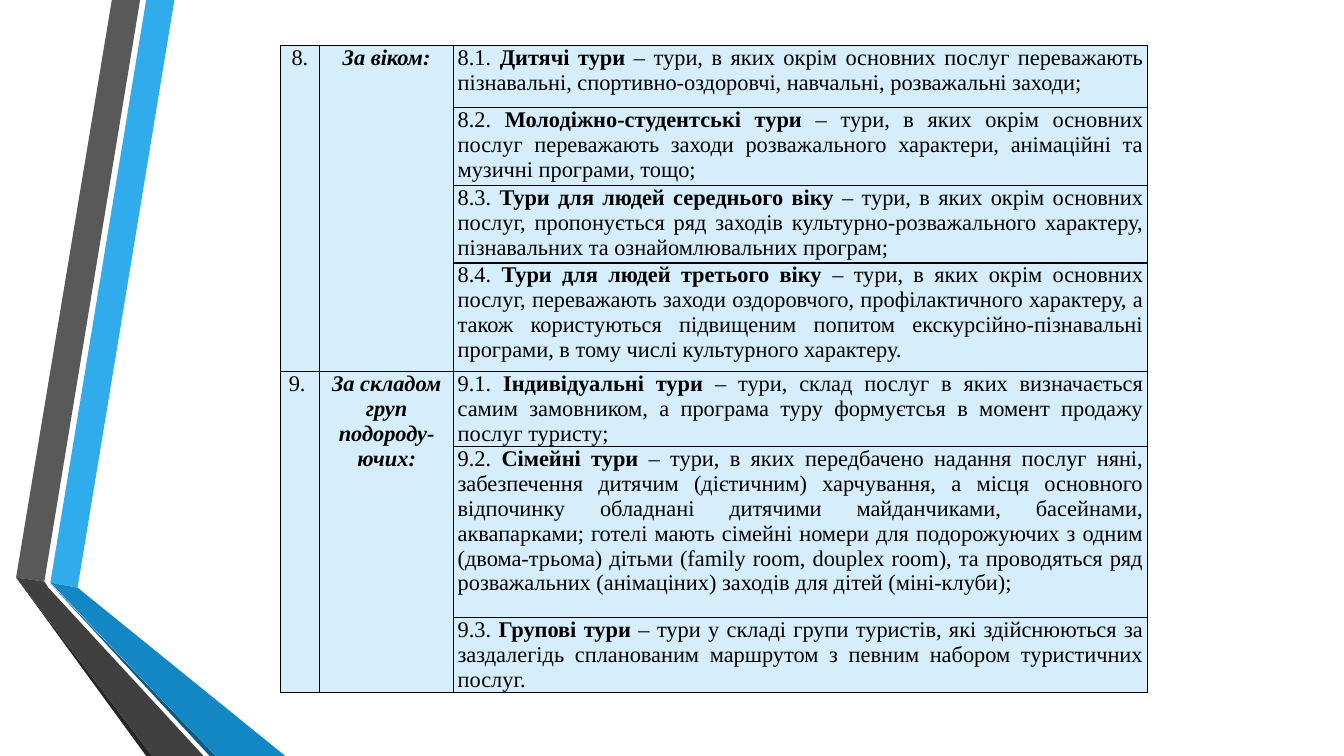
from dataclasses import dataclass
from lxml.etree import SubElement
from pptx import Presentation
from pptx.dml.color import RGBColor
from pptx.enum.text import PP_ALIGN
from pptx.oxml import parse_xml
from pptx.oxml.ns import nsdecls
from pptx.util import Inches, Pt


@dataclass(frozen=True)
class Theme:
    font: str = "Times New Roman"
    size: int = 16
    ink: str = "000000"
    cell: str = "D6EEFB"
    rule: float = 1
    sky: str = "30ACEC"
    blue: str = "1287C3"
    navy: str = "0C5A82"
    gray: str = "595959"
    dark: str = "404040"
    black: str = "262626"


THEME = Theme()

# Ribbon strips: colour and corner points, in inches from the box corner
STRIPS = [
    (THEME.sky, [(0.34, 5.78), (0.61, 5.83), (1.57, 0), (1.29, 0)]),
    (THEME.gray, [(1.23, 0), (0.95, 0), (0, 5.73), (0.28, 5.77)]),
    (THEME.black, [(0, 5.73), (1.29, 7.5), (1.35, 7.5)]),
    (THEME.navy, [(0.34, 5.79), (1.92, 7.5), (1.98, 7.5)]),
    (THEME.blue, [(0.34, 5.78), (1.98, 7.5), (2.67, 7.5), (0.61, 5.83)]),
    (THEME.dark, [(1.86, 7.5), (0.32, 5.83), (0.28, 5.77), (0, 5.73), (1.35, 7.5)]),
]

# Groups: number, title, rows of (height, number, name, text)
GROUPS = [
    ("8.", "За віком:", [
        (0.62, "8.1. ", "Дитячі тури",
         " – тури, в яких окрім основних послуг переважають пізнавальні, "
         "спортивно-оздоровчі, навчальні, розважальні заходи;"),
        (0.77, "8.2. ", "Молодіжно-студентські тури",
         " – тури, в яких окрім основних послуг переважають заходи "
         "розважального характери, анімаційні та музичні програми, тощо;"),
        (0.77, "8.3. ", "Тури для людей середнього віку",
         " – тури, в яких окрім основних послуг, пропонується ряд заходів "
         "культурно-розважального характеру, пізнавальних та "
         "ознайомлювальних програм;"),
        (1.08, "8.4. ", "Тури для людей третього віку",
         " – тури, в яких окрім основних послуг, переважають заходи "
         "оздоровчого, профілактичного характеру, а також користуються "
         "підвищеним попитом екскурсійно-пізнавальні програми, в тому "
         "числі культурного характеру."),
    ]),
    ("9. ", "За складом груп подороду-ючих:", [
        (0.74, "9.1. ", "Індивідуальні тури",
         " – тури, склад послуг в яких визначається самим замовником, "
         "а програма туру формуєтсья в момент продажу послуг туристу;"),
        (1.7, "9.2. ", "Сімейні тури",
         " – тури, в яких передбачено надання послуг няні, забезпечення "
         "дитячим (дієтичним) харчування, а місця основного відпочинку "
         "обладнані дитячими майданчиками, басейнами, аквапарками; готелі "
         "мають сімейні номери для подорожуючих з одним (двома-трьома) "
         "дітьми (family room, douplex room), та проводяться ряд "
         "розважальних (анімаціних) заходів для дітей (міні-клуби);"),
        (0.74, "9.3. ", "Групові тури",
         " – тури у складі групи туристів, які здійснюються за "
         "заздалегідь спланованим маршрутом з певним набором "
         "туристичних послуг."),
    ]),
]
COLS = [0.39, 1.33, 6.88]


def apply(item, form):
    for key, value in form.items():
        setattr(item, key, value)


def draw_strips(slide, left, top):
    for color, points in STRIPS:
        spots = [(Inches(left + x), Inches(top + y)) for x, y in points]
        pen = slide.shapes.build_freeform(*spots[0])
        pen.add_line_segments(spots[1:], close=True)
        strip = pen.convert_to_shape()
        strip.shadow.inherit = False
        strip.fill.solid()
        strip.fill.fore_color.rgb = RGBColor.from_string(color)
        strip.line.fill.background()


def style_cell(cell):
    apply(cell, {"margin_left": Inches(0.04), "margin_right": Inches(0.04),
                 "margin_top": 0, "margin_bottom": 0})
    cell.fill.solid()
    cell.fill.fore_color.rgb = RGBColor.from_string(THEME.cell)
    # Borders come before the fill in the cell's XML
    props = cell._tc.get_or_add_tcPr()
    for spot, side in enumerate(("lnL", "lnR", "lnT", "lnB")):
        line = parse_xml(f'<a:{side} {nsdecls("a")} w="{Pt(THEME.rule)}"/>')
        fill = SubElement(line, line.tag.replace(side, "solidFill"))
        SubElement(fill, line.tag.replace(side, "srgbClr"), val=THEME.ink)
        props.insert(spot, line)


def write(cell, align, runs):
    para = cell.text_frame.paragraphs[0]
    para.alignment = align
    for text, form in runs:
        run = para.add_run()
        run.text = text
        apply(run.font, {"name": THEME.font, "size": Pt(THEME.size),
                         "bold": False, "italic": False, **form})
        run.font.color.rgb = RGBColor.from_string(THEME.ink)


def draw_table(slide, left, top):
    tours = [tour for group in GROUPS for tour in group[2]]
    high = sum(tour[0] for tour in tours)
    table = slide.shapes.add_table(
        len(tours), len(COLS), Inches(left), Inches(top),
        Inches(sum(COLS)), Inches(high)).table
    apply(table, {"first_row": False, "horz_banding": False})
    for col, width in zip(table.columns, COLS):
        col.width = Inches(width)
    for cell in table.iter_cells():
        style_cell(cell)

    # Tour rows
    for row, (size, number, name, text) in enumerate(tours):
        table.rows[row].height = Inches(size)
        write(table.cell(row, 2), PP_ALIGN.JUSTIFY,
              [(number, {}), (name, {"bold": True}), (text, {})])

    # Merged group heads
    first = 0
    for number, title, rows in GROUPS:
        last = first + len(rows) - 1
        heads = [(number, {}), (title, {"bold": True, "italic": True})]
        for col, head in enumerate(heads):
            table.cell(first, col).merge(table.cell(last, col))
            write(table.cell(first, col), PP_ALIGN.CENTER, [head])
        first = last + 1


def main():
    deck = Presentation()
    apply(deck, {"slide_width": Inches(13.33), "slide_height": Inches(7.5)})
    slide = deck.slides.add_slide(deck.slide_layouts[6])
    draw_strips(slide, 0.16, 0)
    draw_table(slide, 2.78, 0.45)
    deck.save("out.pptx")


if __name__ == "__main__":
    main()
